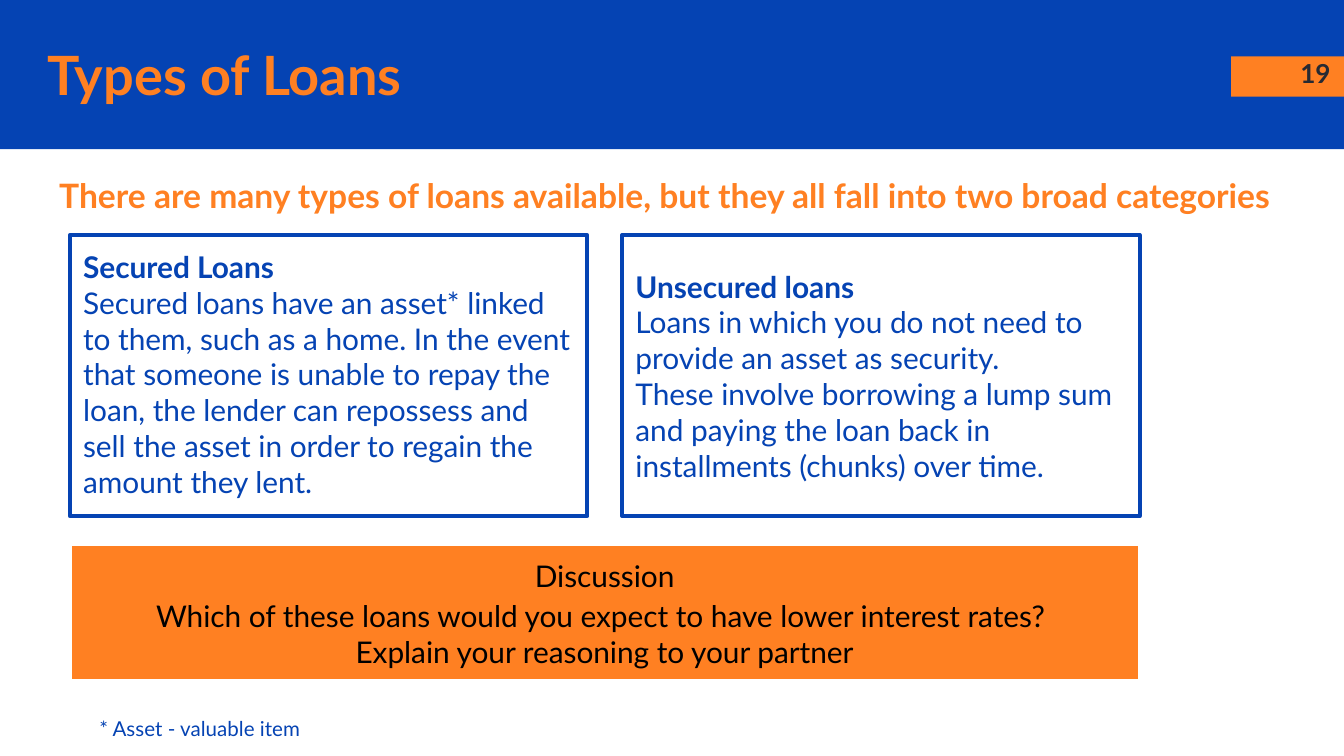
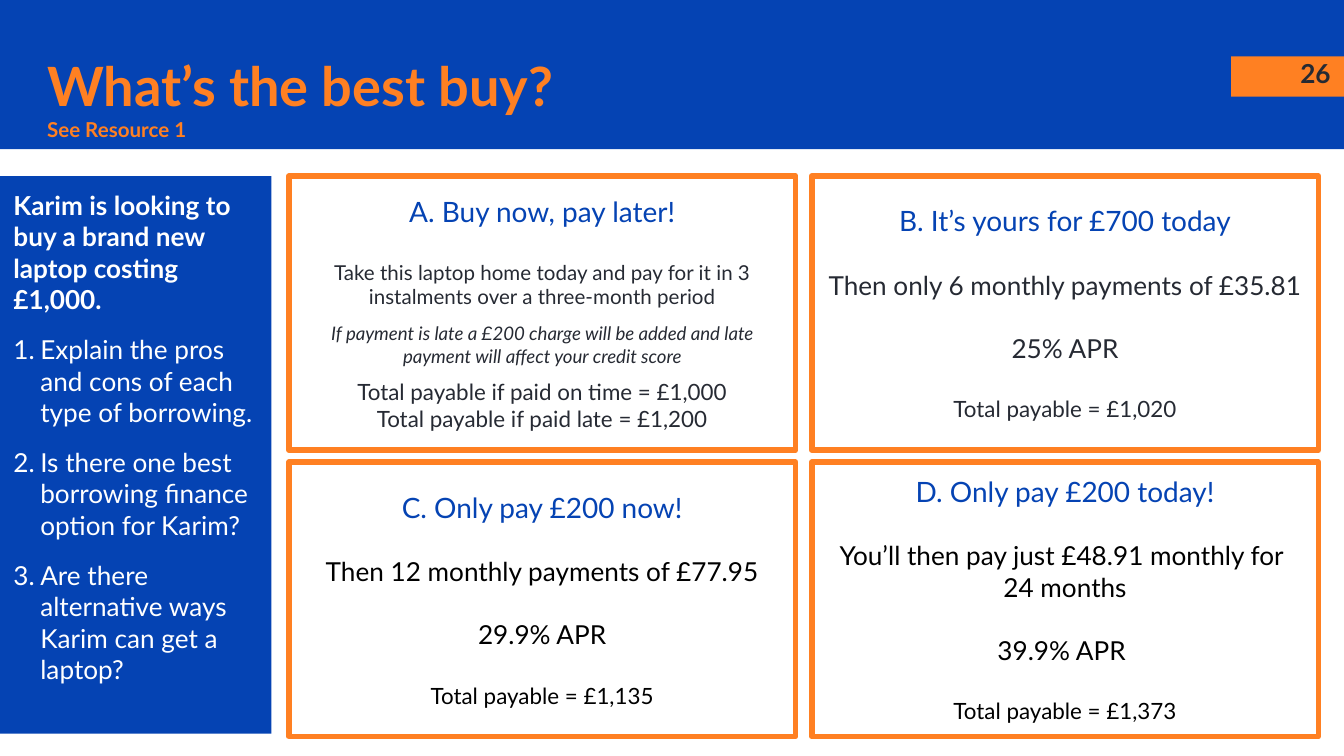
from lxml import etree
from pptx import Presentation
from pptx import util as u
from pptx.dml.color import RGBColor
from pptx.enum import shapes, text
from pptx.oxml.ns import qn

BLUE = RGBColor(0x05, 0x43, 0xB3)
ORANGE = RGBColor(0xFF, 0x80, 0x22)
INK = RGBColor(0x26, 0x2A, 0x33)
BLACK = RGBColor(0, 0, 0)
WHITE = RGBColor(0xFF, 0xFF, 0xFF)
FONT = "Lato"
RECT = shapes.MSO_SHAPE.RECTANGLE
LEFT, CENTER, RIGHT = text.PP_ALIGN.LEFT, text.PP_ALIGN.CENTER, text.PP_ALIGN.RIGHT
TOP, MIDDLE = text.MSO_ANCHOR.TOP, text.MSO_ANCHOR.MIDDLE
COLUMNS, ROWS = 100, 56.25

deck = Presentation()
deck.slide_width = u.Inches(10)
deck.slide_height = deck.slide_width * 9 // 16
column, row = deck.slide_width / COLUMNS, deck.slide_height / ROWS


def style(box, grid, fill=None, line=None, weight=0):
    left, top, width, height = grid
    box.left, box.top = int(left * column), int(top * row)
    box.width, box.height = int(width * column), int(height * row)
    box.shadow.inherit = False
    if fill is None:
        box.fill.background()
    else:
        box.fill.solid()
        box.fill.fore_color.rgb = fill
    if line is None:
        box.line.fill.background()
    else:
        box.line.color.rgb = line
        box.line.width = u.Pt(weight)
    return box


def write(box, lines, align=LEFT, anchor=TOP):
    frame = box.text_frame
    frame.word_wrap = True
    frame.auto_size = text.MSO_AUTO_SIZE.NONE
    frame.vertical_anchor = anchor
    frame.margin_left = frame.margin_right = u.Inches(0.1)
    frame.margin_top = frame.margin_bottom = u.Inches(0.1)
    frame.text = "\n".join(line[0] for line in lines)
    for para, (_, size, color, before, weight) in zip(frame.paragraphs, lines):
        para.alignment = align
        para.space_before = u.Pt(before)
        for span in para.runs:
            span.font.name = FONT
            span.font.size = u.Pt(size)
            span.font.color.rgb = color
            span.font.bold = weight == "bold"
            span.font.italic = weight == "italic"


headings = [
    ("19", (2.5, 2.7, 62.4, 5.6), MIDDLE, [("Types of Loans", 29, ORANGE, 0, "bold")]),
    ("26", (2.5, 1.8, 78.3, 5.6), TOP, [
        ("What’s the best buy?", 29, ORANGE, 0, "bold"),
        ("See Resource 1", 11, ORANGE, 0, "bold")]),
]
pages = []
for number, title_grid, anchor, lines in headings:
    page = deck.slides.add_slide(deck.slide_layouts[1])
    title = style(page.shapes.title, title_grid)
    write(title, lines, LEFT, anchor)
    for grid, fill in [((0, 0, COLUMNS, 11.1), BLUE), ((91.6, 4.2, 8.4, 3), ORANGE)]:
        band = style(page.shapes.add_shape(RECT, 0, 0, 0, 0), grid, fill)
        title.element.addprevious(band.element)
    page_number = style(page.shapes.add_textbox(0, 0, 0, 0), (94, 3.3, 6, 4.3))
    write(page_number, [(number, 14, INK, 0, "bold")], RIGHT)
    pages.append(page)

loans, offers = pages
offers.shapes.title.text_frame.margin_top = u.Inches(0.21)

statement = style(loans.placeholders[1], (3.4, 12, 93.3, 5))
write(statement, [(
    "There are many types of loans available, but they all fall into two broad categories",
    18, ORANGE, 0, "bold")])

categories = [
    (TOP, "Secured Loans", [
        "Secured loans have an asset* linked to them, such as a home. In the event that "
        "someone is unable to repay the loan, the lender can repossess and sell the asset "
        "in order to regain the amount they lent."]),
    (MIDDLE, "Unsecured loans", [
        "Loans in which you do not need to provide an asset as security.",
        "These involve borrowing a lump sum and paying the loan back in installments "
        "(chunks) over time."]),
]
for index, (anchor, name, details) in enumerate(categories):
    category = loans.shapes.add_shape(RECT, 0, 0, 0, 0)
    style(category, (5.2 + 41.1 * index, 17.5, 38.5, 20.9), None, BLUE, 2.25)
    lines = [(name, 16, BLUE, 0, "bold")]
    lines += [(detail, 16, BLUE, 0, "") for detail in details]
    write(category, lines, LEFT, anchor)

discussion = loans.shapes.add_shape(RECT, 0, 0, 0, 0)
style(discussion, (5.2, 40.5, 79.6, 10.2), ORANGE, WHITE, 2.25)
write(discussion, [
    ("Discussion", 16, BLACK, 0, ""),
    ("Which of these loans would you expect to have lower interest rates? ", 16, BLACK, 2.4, ""),
    ("Explain your reasoning to your partner", 16, BLACK, 0, ""),
], CENTER)

footnote = style(loans.shapes.add_textbox(0, 0, 0, 0), (6.4, 52.3, 60.2, 3.9))
write(footnote, [("* Asset - valuable item", 11, BLUE, 0, "")])

cards = [
    ("A. Buy now, pay later!", [
        ("Take this laptop home today and pay for it in 3 instalments over a three-month period",
         11, INK, 17, ""),
        ("If payment is late a £200 charge will be added and late payment will affect your "
         "credit score", 10, INK, 7, "italic"),
        ("Total payable if paid on time = £1,000", 12, INK, 6, ""),
        ("Total payable if paid late = £1,200", 12, INK, 0, "")]),
    ("B. It’s yours for £700 today", [
        ("Then only 6 monthly payments of £35.81", 14, INK, 17, ""),
        ("25% APR", 14, INK, 17, ""),
        ("Total payable = £1,020", 12, INK, 17, "")]),
    ("C. Only pay £200 now!", [
        ("Then 12 monthly payments of £77.95", 14, BLACK, 17, ""),
        ("29.9% APR", 14, BLACK, 17, ""),
        ("Total payable = £1,135", 12, BLACK, 17, "")]),
    ("D. Only pay £200 today!", [
        ("You’ll then pay just £48.91 monthly for ", 14, BLACK, 17, ""),
        ("24 months", 14, BLACK, 0, ""),
        ("39.9% APR ", 14, BLACK, 17, ""),
        ("Total payable = £1,373", 12, BLACK, 17, "")]),
]
for index, (name, terms) in enumerate(cards):
    down, across = divmod(index, 2)
    card = offers.shapes.add_shape(RECT, 0, 0, 0, 0)
    style(card, (21.5 + 38.9 * across, 13.1 + 21.3 * down, 37.7, 20.4), WHITE, ORANGE, 3)
    write(card, [(name, 15, BLUE, 0, "")] + terms, CENTER, MIDDLE)

tasks = style(offers.placeholders[1], (0, 13.1, 20.2, 41.5), BLUE)
write(tasks, [
    ("Karim is looking to buy a brand new laptop costing £1,000.", 14, WHITE, 0, "bold"),
    ("Explain the pros and cons of each type of borrowing.", 14, WHITE, 10, ""),
    ("Is there one best borrowing finance option for Karim?", 14, WHITE, 10, ""),
    ("Are there alternative ways Karim can get a laptop?", 14, WHITE, 10, ""),
])

for body in (statement, tasks):
    for index, para in enumerate(body.text_frame.paragraphs):
        properties = para._p.get_or_add_pPr()
        indent = u.Inches(0.2) if index else 0
        properties.set("marL", str(int(indent)))
        properties.set("indent", str(-int(indent)))
        if index:
            color = etree.SubElement(properties, qn("a:buClr"))
            etree.SubElement(color, qn("a:srgbClr"), val=str(WHITE))
            etree.SubElement(properties, qn("a:buFont"), typeface=FONT)
            etree.SubElement(properties, qn("a:buAutoNum"), type="arabicPeriod")
        else:
            etree.SubElement(properties, qn("a:buNone"))

deck.save("out.pptx")
